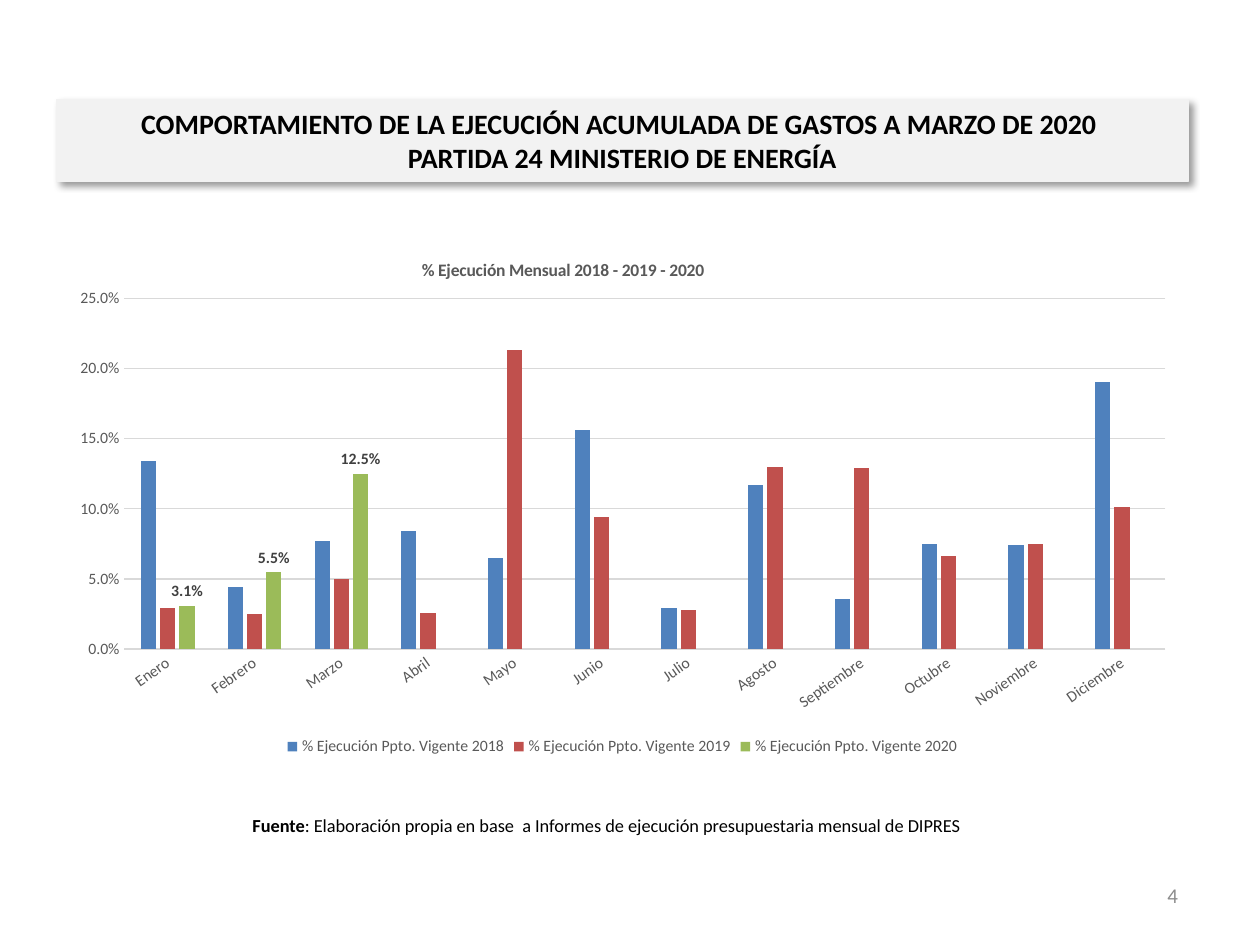
import pptx
import pptx.chart.data
import pptx.dml.color
import pptx.enum.chart
import pptx.enum.shapes
import pptx.enum.text
import pptx.oxml
import pptx.oxml.ns
import pptx.util

Cm, Pt = pptx.util.Cm, pptx.util.Pt
Mid = pptx.enum.text.MSO_ANCHOR.MIDDLE
Align = pptx.enum.text.PP_ALIGN
qn, nsd = pptx.oxml.ns.qn, pptx.oxml.ns.nsdecls
tone = pptx.dml.color.RGBColor.from_string


def style(font, size, color, bold=False):
    font.name, font.size, font.bold = "Calibri", Pt(size), bold
    font.color.rgb = tone(color)


def place(part, spot, **dims):
    """Set a manual chart layout as fractions of the chart area."""
    for old in part.findall(qn("c:layout")):
        part.remove(old)
    inner = '<c:layoutTarget val="inner"/>' if "w" in dims else ""
    modes = "".join(f'<c:{key}Mode val="edge"/>' for key in "xy")
    sizes = "".join(f'<c:{key} val="{val}"/>' for key, val in dims.items())
    part.insert(spot, pptx.oxml.parse_xml(
        f'<c:layout {nsd("c")}><c:manualLayout>{inner}{modes}{sizes}'
        '</c:manualLayout></c:layout>'))


deck = pptx.Presentation()
deck.slide_width, deck.slide_height = Cm(25.4), Cm(19.05)
slide = deck.slides.add_slide(deck.slide_layouts[6])
left, wide = Cm(1.14), Cm(22.81)

# Heading band with a soft shadow
band = slide.shapes.add_shape(
    pptx.enum.shapes.MSO_SHAPE.RECTANGLE, left, Cm(2.01), wide, Cm(1.65))
band.shadow.inherit = False
band.fill.solid()
band.fill.fore_color.rgb = tone("F2F2F2")
band.line.color.rgb = tone("F2F2F2")
band.line.width = Pt(0.75)
glow = band._element.spPr.find(qn("a:effectLst"))
glow.append(pptx.oxml.parse_xml(
    f'<a:outerShdw {nsd("a")} blurRad="{Pt(4)}" dist="{Pt(3)}" dir="2700000" '
    'algn="tl" rotWithShape="0"><a:srgbClr val="000000">'
    '<a:alpha val="40000"/></a:srgbClr></a:outerShdw>'))
frame = band.text_frame
frame.word_wrap, frame.vertical_anchor = True, Mid
para = frame.paragraphs[0]
para.alignment = Align.CENTER
para.add_run().text = "COMPORTAMIENTO DE LA EJECUCIÓN ACUMULADA DE GASTOS A MARZO DE 2020 "
para.add_line_break()
para.add_run().text = "PARTIDA 24 MINISTERIO DE ENERGÍA"
style(para.font, 16, "000000", True)

# Chart data
data = pptx.chart.data.CategoryChartData(number_format="0.0%")
data.categories = ["Enero", "Febrero", "Marzo", "Abril", "Mayo", "Junio", "Julio",
                   "Agosto", "Septiembre", "Octubre", "Noviembre", "Diciembre"]
years = [
    (2018, "4F81BD", [0.134, 0.044, 0.077, 0.084, 0.065, 0.156,
                      0.029, 0.117, 0.036, 0.075, 0.074, 0.19]),
    (2019, "C0504D", [0.029, 0.025, 0.05, 0.026, 0.213, 0.094,
                      0.028, 0.13, 0.129, 0.066, 0.075, 0.101]),
    (2020, "9BBB59", [0.031, 0.055, 0.125] + [None] * 9),
]
for year, color, vals in years:
    data.add_series(f"% Ejecución Ppto. Vigente {year}", vals)

# Column chart
kinds = pptx.enum.chart
chart = slide.shapes.add_chart(
    kinds.XL_CHART_TYPE.COLUMN_CLUSTERED, left, Cm(4.62), wide, Cm(10.72), data).chart
style(chart.font, 10, "000000")
plot = chart.plots[0]
plot.gap_width, plot.overlap, plot.vary_by_categories = 219, -27, False
for bar, (year, color, vals) in zip(plot.series, years):
    bar.format.fill.solid()
    bar.format.fill.fore_color.rgb = tone(color)

# Value labels on the latest year
tags = bar.data_labels
tags.show_value = True
tags.number_format, tags.number_format_is_linked = "0.0%", False
tags.position = kinds.XL_LABEL_POSITION.OUTSIDE_END
style(tags.font, 9, "404040", True)

# Chart title
para = chart.chart_title.text_frame.paragraphs[0]
para.add_run().text = "% Ejecución Mensual 2018 - 2019 - 2020"
style(para.font, 10, "595959", True)
chart.chart_title.include_in_layout = False
place(chart.chart_title._element, 1, x=0.32, y=0.05)
place(chart._chartSpace.chart.plotArea, 0, x=0.06, y=0.13, w=0.92, h=0.66)

# Axes
cat, val = chart.category_axis, chart.value_axis
for axis in (cat, val):
    axis.major_tick_mark = axis.minor_tick_mark = kinds.XL_TICK_MARK.NONE
    style(axis.tick_labels.font, 9, "595959")
cat._element.txPr.find(qn("a:bodyPr")).set("rot", "-2100000")
val.minimum_scale, val.maximum_scale, val.major_unit = 0, 0.25, 0.05
val.tick_labels.number_format = "0.0%"
val.tick_labels.number_format_is_linked = False
val.format.line.fill.background()
for line in (cat.format.line, val.major_gridlines.format.line):
    line.color.rgb = tone("D9D9D9")
    line.width = Pt(0.75)

# Legend
chart.has_legend = True
chart.legend.position = kinds.XL_LEGEND_POSITION.BOTTOM
chart.legend.include_in_layout = False
style(chart.legend.font, 9, "595959")

# Source note and page number
notes = [
    ((2.49, 16.13, 19.48, 1.02), Align.CENTER, 10.5, "000000",
     ["Fuente", ": Elaboración propia en base  a Informes de ejecución "
      "presupuestaria mensual de DIPRES"]),
    ((18.08, 17.53, 5.92, 1.02), Align.RIGHT, 12, "8C8C8C", ["4"]),
]
for spot, align, size, color, parts in notes:
    frame = slide.shapes.add_textbox(*map(Cm, spot)).text_frame
    frame.word_wrap, frame.vertical_anchor = True, Mid
    para = frame.paragraphs[0]
    para.alignment = align
    style(para.font, size, color)
    for part in parts:
        run = para.add_run()
        run.text = part
        if part == "Fuente":
            run.font.bold = True

deck.save("out.pptx")
